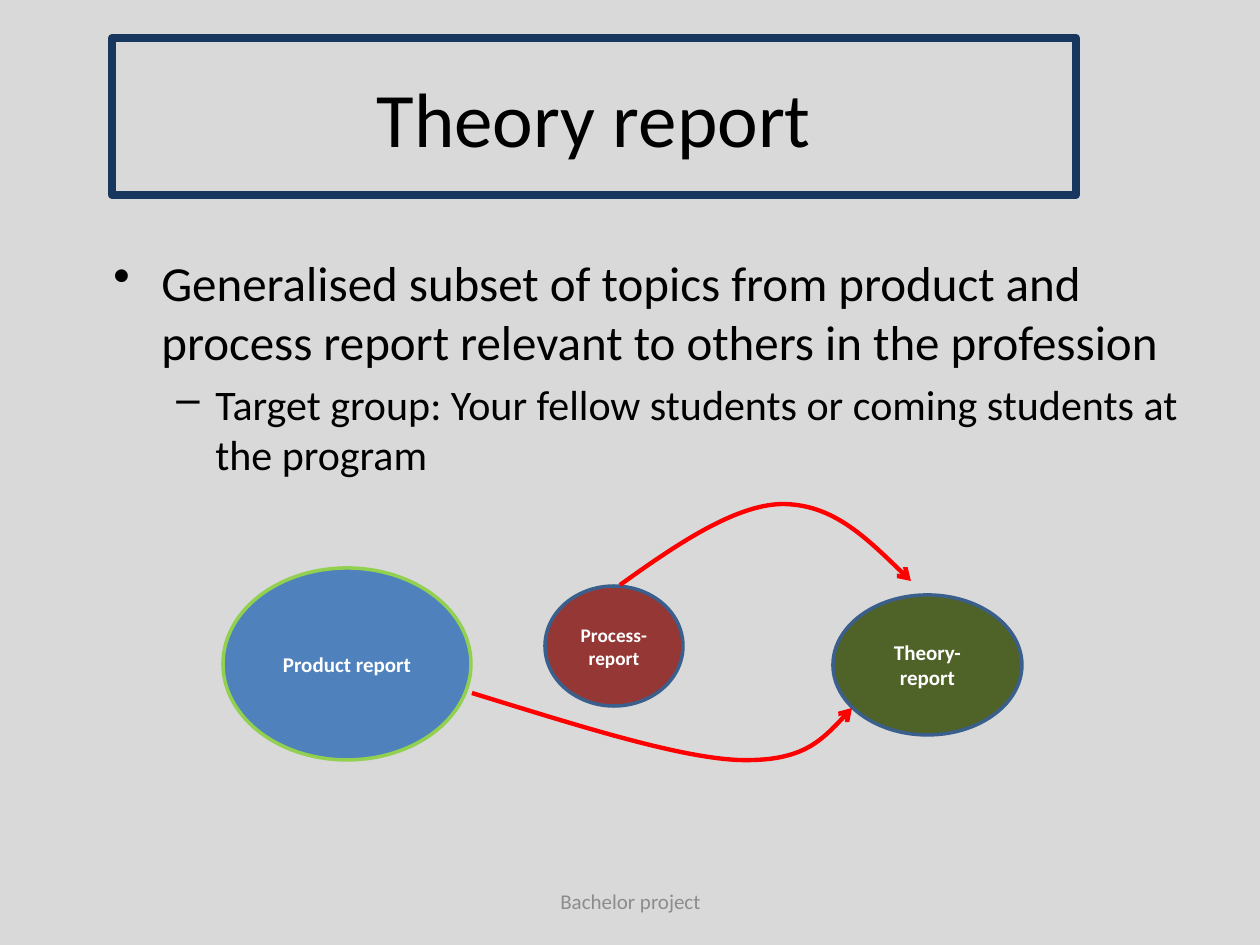
from lxml.etree import SubElement
from pptx import Presentation
from pptx.dml.color import RGBColor
from pptx.enum.shapes import MSO_SHAPE as Shape
from pptx.enum.text import MSO_ANCHOR as Anchor, PP_ALIGN as Align
from pptx.oxml.ns import qn
from pptx.util import Emu, Pt

EMU_PER_PX = 914400 / 126
FONT = "Calibri"
BACKGROUND = RGBColor(0xD9, 0xD9, 0xD9)
BLACK = RGBColor(0, 0, 0)
WHITE = RGBColor(0xFF, 0xFF, 0xFF)
GREY = RGBColor(0x8C, 0x8C, 0x8C)
NAVY = RGBColor(0x17, 0x37, 0x5E)
BLUE = RGBColor(0x4F, 0x81, 0xBD)
EDGE_BLUE = RGBColor(0x3A, 0x5F, 0x8C)
LIME = RGBColor(0x92, 0xD0, 0x50)
MAROON = RGBColor(0x95, 0x37, 0x35)
OLIVE = RGBColor(0x4F, 0x62, 0x28)
RED = RGBColor(0xFF, 0, 0)


def px(*lengths):
    return [Emu(round(length * EMU_PER_PX)) for length in lengths]


def style_paragraph(paragraph, text, size, color, bold=False, align=Align.CENTER):
    paragraph.text = text
    paragraph.alignment = align
    font = paragraph.font
    font.name, font.size, font.bold = FONT, Pt(size), bold
    font.color.rgb = color


def add_label_shape(slide, kind, box, text, size, text_color, edge, edge_width,
                    fill=None, bold=False):
    shape = slide.shapes.add_shape(kind, *px(*box))
    shape.shadow.inherit = False
    if fill is None:
        shape.fill.background()
    else:
        shape.fill.solid()
        shape.fill.fore_color.rgb = fill
    shape.line.color.rgb = edge
    shape.line.width = Pt(edge_width)
    frame = shape.text_frame
    frame.word_wrap = True
    frame.vertical_anchor = Anchor.MIDDLE
    style_paragraph(frame.paragraphs[0], text, size, text_color, bold)


def add_text_frame(slide, box, anchor):
    frame = slide.shapes.add_textbox(*px(*box)).text_frame
    frame.word_wrap = True
    frame.vertical_anchor = anchor
    return frame


def add_bullets(slide, box, items):
    """Each item is (text, level, size, bullet, indent px, hanging px)."""
    frame = add_text_frame(slide, box, Anchor.TOP)
    for number, (text, level, size, bullet, indent, hanging) in enumerate(items):
        paragraph = frame.add_paragraph() if number else frame.paragraphs[0]
        style_paragraph(paragraph, text, size, BLACK, align=Align.LEFT)
        paragraph.level = level
        paragraph.space_before = Pt(size * 0.2)
        properties = paragraph._p.get_or_add_pPr()
        left, hang = px(indent, hanging)
        properties.set("marL", str(left))
        properties.set("indent", str(-hang))
        mark = properties.makeelement(qn("a:buChar"), {"char": bullet})
        properties.find(qn("a:spcBef")).addnext(mark)


def add_curved_arrow(slide, start, *controls):
    """Draw cubic Bezier segments, each given by three control points."""
    builder = slide.shapes.build_freeform(*px(*start), scale=1.0)
    builder.add_line_segments([px(*point) for point in controls], close=False)
    curve = builder.convert_to_shape()
    lines = curve._element.xpath(".//a:lnTo")
    for first in range(0, len(lines), 3):
        segment = lines[first:first + 3]
        bezier = segment[0].makeelement(qn("a:cubicBezTo"), {})
        segment[0].addprevious(bezier)
        for line in segment:
            bezier.append(line[0])
            line.getparent().remove(line)
    curve.shadow.inherit = False
    curve.fill.background()
    curve.line.color.rgb = RED
    curve.line.width = Pt(2.5)
    SubElement(curve.line._get_or_add_ln(), qn("a:tailEnd"), type="arrow")


def main():
    presentation = Presentation()
    presentation.slide_width, presentation.slide_height = px(1260, 945)
    slide = presentation.slides.add_slide(presentation.slide_layouts[6])
    slide.background.fill.solid()
    slide.background.fill.fore_color.rgb = BACKGROUND

    add_label_shape(slide, Shape.RECTANGLE, (112, 38, 964, 157),
                    "Theory report", 44, BLACK, NAVY, 4.5)
    add_bullets(slide, (101, 246, 1134, 624), [
        ("Generalised subset of topics from product and process report "
         "relevant to others in the profession", 0, 28, "•", 48, 48),
        ("Target group: Your fellow students or coming students at the program",
         1, 24, "–", 102, 39),
    ])

    reports = [
        ("Product report", (223, 568, 248, 192), 12, BLUE, LIME),
        ("Process-report", (545, 586, 138, 120), 11, MAROON, EDGE_BLUE),
        ("Theory-report", (833, 595, 189, 140), 12, OLIVE, EDGE_BLUE),
    ]
    for name, box, size, fill, edge in reports:
        add_label_shape(slide, Shape.OVAL, box, name, size, WHITE, edge, 2,
                        fill, bold=True)

    footer = add_text_frame(slide, (431, 876, 399, 50), Anchor.MIDDLE)
    style_paragraph(footer.paragraphs[0], "Bachelor project", 12, GREY)

    add_curved_arrow(slide, (620, 585), (677, 544), (735, 505), (782, 504),
                     (832, 504), (871, 542), (911, 581))
    add_curved_arrow(slide, (472, 693), (573, 724), (675, 757), (738, 760),
                     (801, 762), (827, 736), (852, 708))
    presentation.save("out.pptx")


if __name__ == "__main__":
    main()
